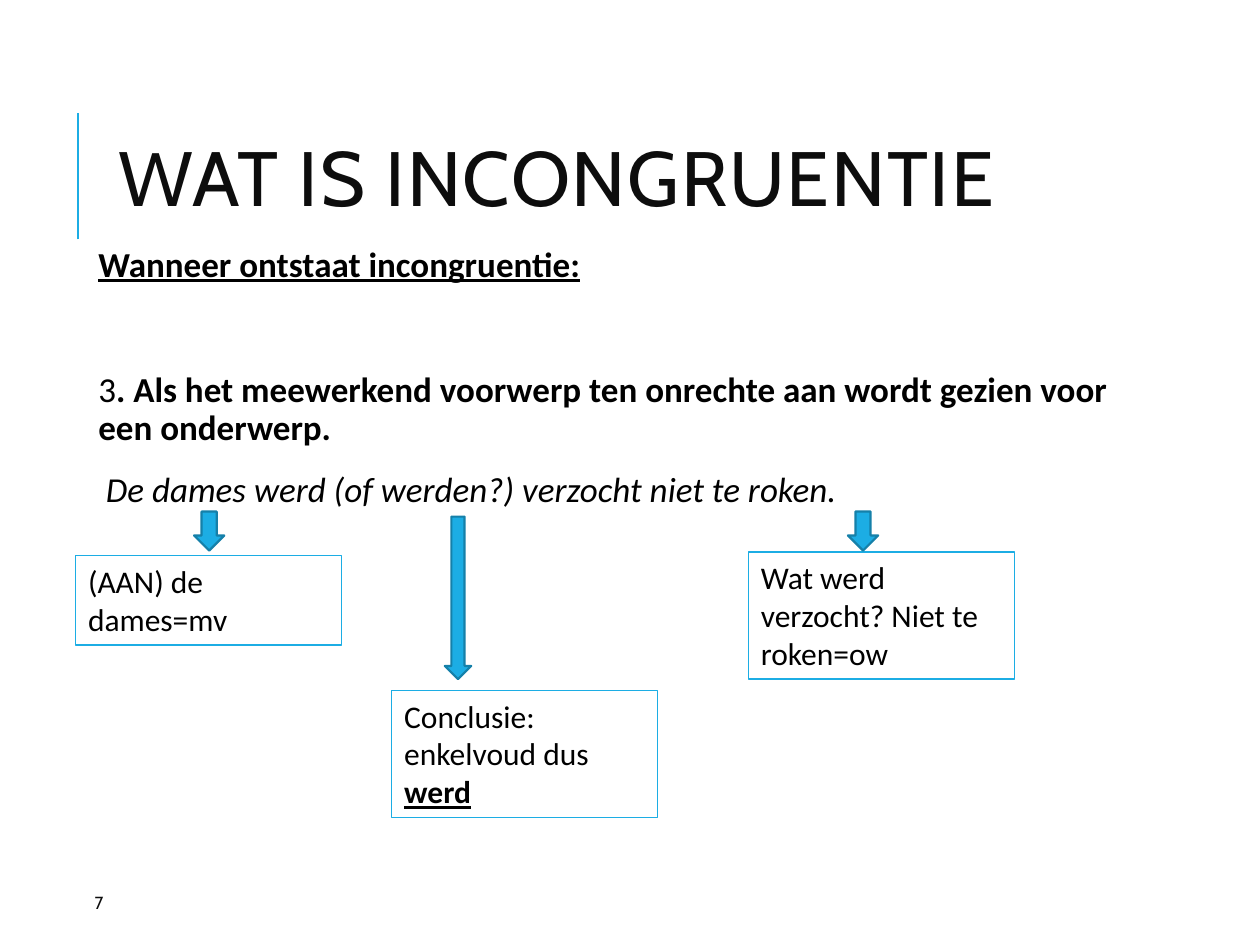
from dataclasses import dataclass

from lxml import etree
from pptx import Presentation
from pptx.dml.color import RGBColor
from pptx.enum.shapes import MSO_CONNECTOR, MSO_SHAPE
from pptx.enum.text import MSO_ANCHOR, MSO_AUTO_SIZE, PP_ALIGN
from pptx.oxml.ns import qn
from pptx.util import Inches, Pt

LINE = MSO_CONNECTOR.STRAIGHT
RECT = MSO_SHAPE.RECTANGLE
DOWN = MSO_SHAPE.DOWN_ARROW
LEFT = PP_ALIGN.LEFT
TOP, MIDDLE = MSO_ANCHOR.TOP, MSO_ANCHOR.MIDDLE
FIXED, GROW = MSO_AUTO_SIZE.NONE, MSO_AUTO_SIZE.SHAPE_TO_FIT_TEXT


@dataclass(frozen=True)
class Theme:
    accent: RGBColor = RGBColor(0x1C, 0xAD, 0xE4)
    edge: RGBColor = RGBColor(0x15, 0x80, 0xA9)
    ink: RGBColor = RGBColor(0x0D, 0x0D, 0x0D)
    black: RGBColor = RGBColor(0, 0, 0)
    head: str = "Cabin"
    text: str = "Calibri"
    title: int = 44
    body: int = 20
    note: int = 18
    number: int = 10


THEME = Theme()


def add_run(para, words, size, font=THEME.text, color=THEME.black,
            bold=False, under=False, slant=False):
    run = para.add_run()
    run.text = words
    face = run.font
    face.size, face.name, face.color.rgb = Pt(size), font, color
    face.bold, face.underline, face.italic = bold, under, slant
    return run


def set_frame(frame, anchor=TOP, side=0.1, edge=0.05, fit=FIXED):
    frame.word_wrap = True
    frame.auto_size = fit
    frame.vertical_anchor = anchor
    frame.margin_left = frame.margin_right = Inches(side)
    frame.margin_top = frame.margin_bottom = Inches(edge)
    return frame


def add_title(slide, x, y, w, h):
    title = slide.shapes.title
    title.left, title.top = Inches(x), Inches(y)
    title.width, title.height = Inches(w), Inches(h)
    para = set_frame(title.text_frame, MIDDLE).paragraphs[0]
    para.alignment, para.line_spacing = LEFT, 0.8
    run = add_run(para, "WAT IS INCONGRUENTIE", THEME.title, THEME.head, THEME.ink)
    run.font._element.set("spc", "100")

    bar_x, bar_y = Inches(x - 0.22), Inches(y + 0.26)
    bar = slide.shapes.add_connector(LINE, bar_x, bar_y + Inches(1), bar_x, bar_y)
    bar.line.color.rgb, bar.line.width = THEME.accent, Pt(1.5)
    etree.SubElement(bar._element.spPr, qn("a:effectLst"))


def add_body(slide, x, y, w, h):
    box = slide.shapes.add_textbox(Inches(x), Inches(y), Inches(w), Inches(h))
    frame = set_frame(box.text_frame, side=0.05)
    rows = [
        (12, 0.1, [("Wanneer ontstaat incongruentie:", {"bold": True, "under": True})]),
        (48, 0.1, [
            ("3", {}),
            (". Als het meewerkend voorwerp ten onrechte aan wordt gezien "
             "voor een onderwerp.", {"bold": True}),
        ]),
        (12, 0.16, [("De dames werd (of werden?) verzocht niet te roken.",
                     {"slant": True})]),
    ]
    for i, (gap, indent, runs) in enumerate(rows):
        para = frame.add_paragraph() if i else frame.paragraphs[0]
        para.line_spacing = 0.9
        para.space_before, para.space_after = Pt(gap), Pt(2)
        para._p.get_or_add_pPr().set("marL", str(Inches(indent)))
        for words, style in runs:
            add_run(para, words, THEME.body, **style)


def add_note(slide, x, y, w, h, runs):
    box = slide.shapes.add_shape(RECT, Inches(x), Inches(y), Inches(w), Inches(h))
    box.shadow.inherit = False
    box.fill.background()
    box.line.color.rgb, box.line.width = THEME.accent, Pt(0.75)
    para = set_frame(box.text_frame, fit=GROW).paragraphs[0]
    para.alignment = LEFT
    for words, style in runs:
        add_run(para, words, THEME.note, **style)


def add_arrow(slide, x, y, w, h):
    arrow = slide.shapes.add_shape(DOWN, Inches(x), Inches(y), Inches(w), Inches(h))
    arrow.shadow.inherit = False
    arrow.fill.solid()
    arrow.fill.fore_color.rgb = THEME.accent
    arrow.line.color.rgb, arrow.line.width = THEME.edge, Pt(1.25)


def add_notes(slide, x, y, w):
    strong = {"bold": True, "under": True}
    notes = [
        (0, 0.35, 0.71, [("(AAN) de dames=mv", {})]),
        (5.34, 0.32, 1.01, [("Wat werd verzocht? Niet te roken=ow", {})]),
        (2.51, 1.42, 1.01, [("Conclusie: enkelvoud dus ", {}), ("werd", strong)]),
    ]
    for dx, dy, h, runs in notes:
        add_note(slide, x + dx, y + dy, w, h, runs)
    for dx, dy, wide, h in [(0.94, 0, 0.24, 0.31), (2.93, 0.04, 0.21, 1.29),
                            (6.13, 0, 0.24, 0.31)]:
        add_arrow(slide, x + dx, y + dy, wide, h)


def add_number(slide, x, y, w, h):
    box = slide.shapes.add_textbox(Inches(x), Inches(y), Inches(w), Inches(h))
    para = set_frame(box.text_frame, MIDDLE, side=0).paragraphs[0]
    add_run(para, "7", THEME.number, THEME.head, THEME.ink)


def main():
    deck = Presentation()
    deck.slide_width, deck.slide_height = Inches(10), Inches(7.5)
    slide = deck.slides.add_slide(deck.slide_layouts[5])
    add_title(slide, 0.84, 0.64, 7.97, 1.64)
    add_body(slide, 0.63, 1.91, 8.62, 5.5)
    add_number(slide, 0.75, 7.06, 0.31, 0.2)
    add_notes(slide, 0.6, 4.06, 2.11)
    deck.save("out.pptx")


if __name__ == "__main__":
    main()
